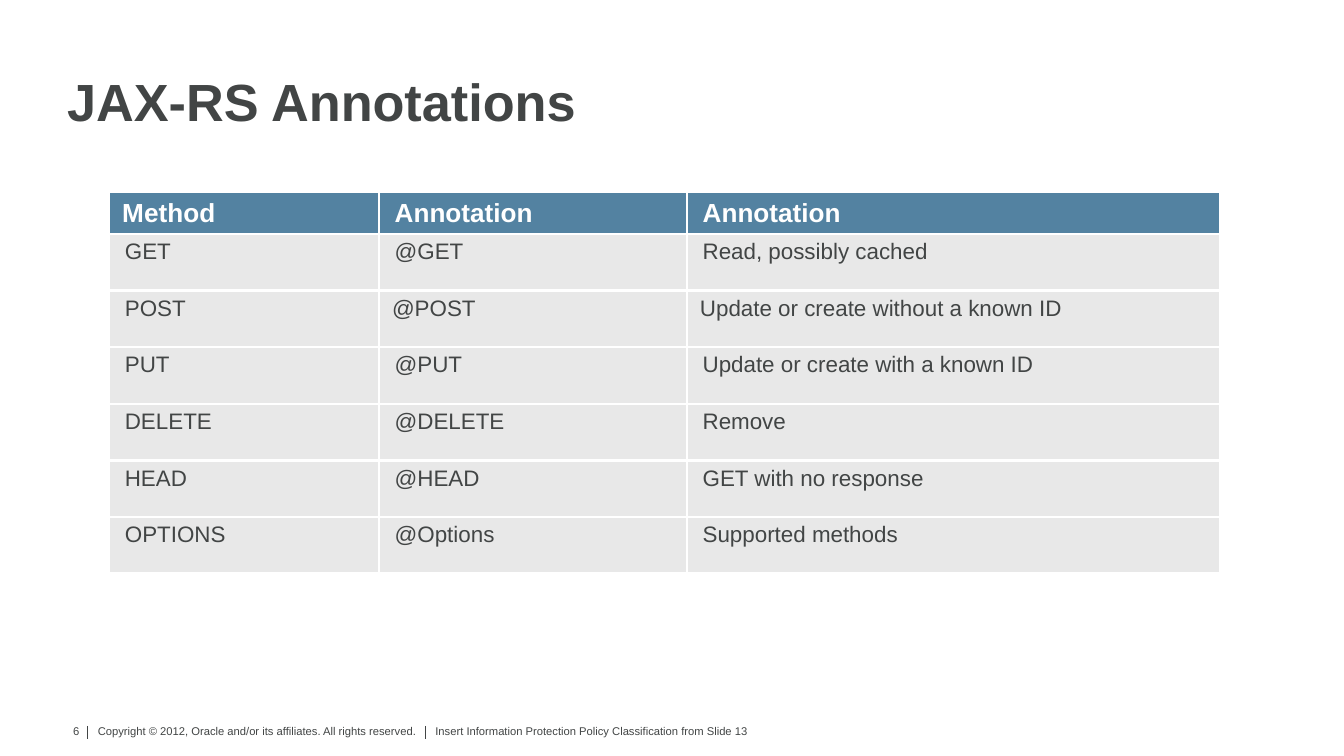
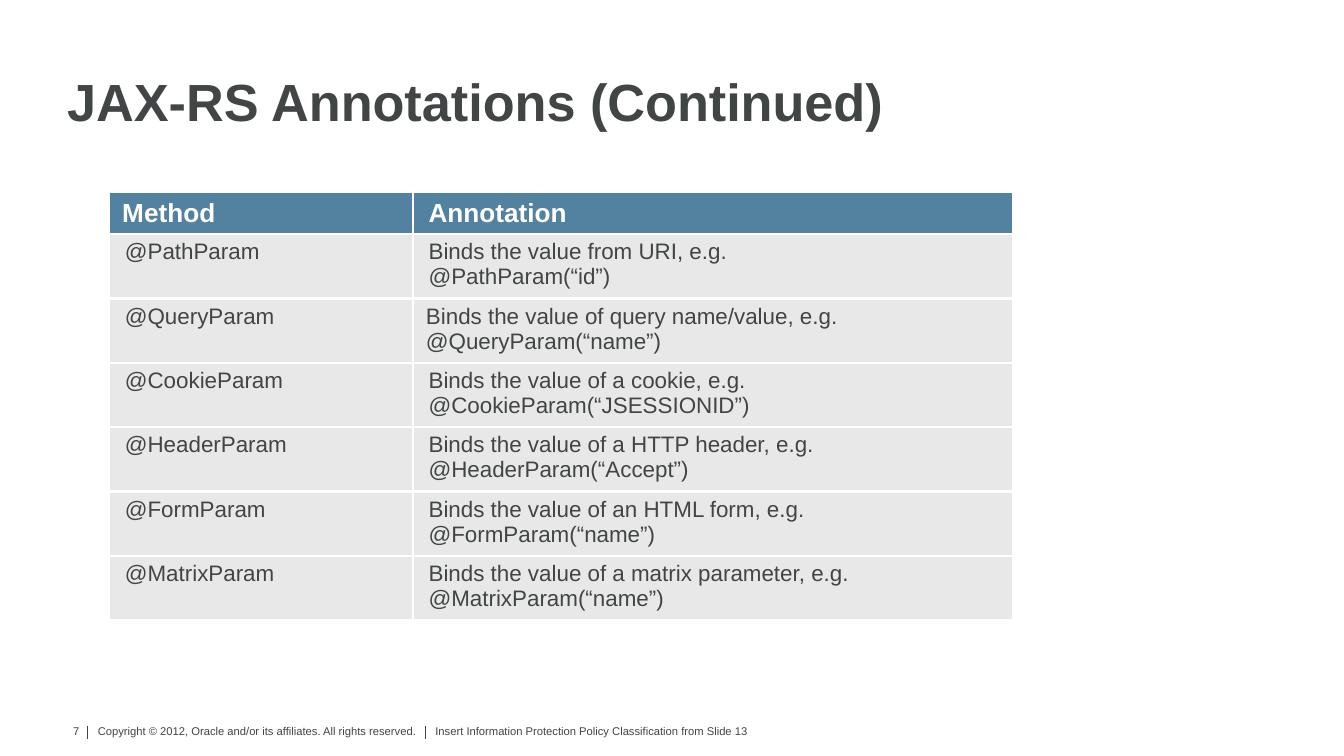
from copy import deepcopy
from lxml.etree import SubElement
from pptx import Presentation
from pptx.dml.color import RGBColor
from pptx.enum.shapes import MSO_CONNECTOR as Connector
from pptx.enum.text import MSO_ANCHOR as Anchor, MSO_AUTO_SIZE as AutoSize, PP_ALIGN as Align
from pptx.oxml.ns import qn
from pptx.util import Cm, Pt

FONT = "Arial"
INK, WHITE, HEADER_FILL, BODY_FILL = "424545", "FFFFFF", "5382A1", "E8E8E8"
FIRST_NUMBER = 6
TITLE_ONLY = 5
TITLE_BOX = (1.27, 1.35, 22.86, 1.17)
TABLE_LEFT, TABLE_TOP = 2.06, 3.63
HEADER_HEIGHT, ROW_HEIGHT = 0.79, 1.07
CELL_INDENT = 0.05
FLUSH_CELLS = {(0, 0), (2, 1), (2, 2)}
FOOTER_TOP, FOOTER_HEIGHT = 13.64, 0.61
NUMBER_BOX = (0.99, 13.56, 0.76, 0.51)
DIVIDERS = (1.65, 8.04)
DIVIDER_TOP, DIVIDER_BOTTOM = 13.72, 13.97

FOOTERS = [
    ("Copyright © 2012, Oracle and/or its affiliates. All rights reserved.", 1.75, 6.96),
    ("Insert Information Protection Policy Classification from Slide 13", 8.13, 6.27),
]

SLIDES = [
    {
        "title": "JAX-RS Annotations",
        "widths": (5.1, 5.82, 10.08),
        "height": 7.21,
        "rows": [
            ("Method", "Annotation", "Annotation"),
            ("GET", "@GET", "Read, possibly cached"),
            ("POST", "@POST", "Update or create without a known ID"),
            ("PUT", "@PUT", "Update or create with a known ID"),
            ("DELETE", "@DELETE", "Remove"),
            ("HEAD", "@HEAD", "GET with no response"),
            ("OPTIONS", "@Options", "Supported methods"),
        ],
    },
    {
        "title": "JAX-RS Annotations (Continued)",
        "widths": (5.74, 11.35),
        "height": 8.05,
        "rows": [
            ("Method", "Annotation"),
            ("@PathParam", "Binds the value from URI, e.g.\n@PathParam(“id”)"),
            ("@QueryParam", "Binds the value of query name/value, e.g.\n@QueryParam(“name”)"),
            ("@CookieParam", "Binds the value of a cookie, e.g.\n@CookieParam(“JSESSIONID”)"),
            ("@HeaderParam", "Binds the value of a HTTP header, e.g.\n@HeaderParam(“Accept”)"),
            ("@FormParam", "Binds the value of an HTML form, e.g.\n@FormParam(“name”)"),
            ("@MatrixParam", "Binds the value of a matrix parameter, e.g.\n@MatrixParam(“name”)"),
        ],
    },
]


def color(value):
    return RGBColor.from_string(value)


def set_all(target, values):
    for name, value in values.items():
        setattr(target, name, value)


def margins(horizontal, vertical):
    return {
        "margin_left": Cm(horizontal), "margin_right": Cm(horizontal),
        "margin_top": Cm(vertical), "margin_bottom": Cm(vertical),
    }


def write(paragraph, text, size, ink=INK, bold=False):
    paragraph.text = text
    for run in paragraph.runs:
        set_all(run.font, {"name": FONT, "size": Pt(size), "bold": bold})
        run.font.color.rgb = color(ink)
    for line_break in paragraph._p.findall(qn("a:br")):
        line_break.insert(0, deepcopy(paragraph.runs[0].font._element))


def add_title(slide, text):
    title = slide.shapes.title
    set_all(title, dict(zip(("left", "top", "width", "height"), map(Cm, TITLE_BOX))))
    frame = title.text_frame
    set_all(frame, {**margins(0, 0), "vertical_anchor": Anchor.BOTTOM,
                    "word_wrap": True, "auto_size": AutoSize.NONE})
    paragraph = frame.paragraphs[0]
    write(paragraph, text, 28, bold=True)
    set_all(paragraph, {"alignment": Align.LEFT, "line_spacing": 0.9})


def add_footer(slide, number):
    for text, left, width in FOOTERS:
        box = slide.shapes.add_textbox(Cm(left), Cm(FOOTER_TOP), Cm(width), Cm(FOOTER_HEIGHT))
        set_all(box.text_frame, {**margins(0.1, 0.05), "word_wrap": True})
        write(box.text_frame.paragraphs[0], text, 6)
    for left in DIVIDERS:
        divider = slide.shapes.add_connector(
            Connector.STRAIGHT, Cm(left), Cm(DIVIDER_TOP), Cm(left), Cm(DIVIDER_BOTTOM))
        divider.line.width = Pt(0.5)
        divider.line.color.rgb = color(INK)
        SubElement(divider._element.spPr, qn("a:effectLst"))
    box = slide.shapes.add_textbox(*map(Cm, NUMBER_BOX))
    set_all(box.text_frame, {"word_wrap": False, "auto_size": AutoSize.SHAPE_TO_FIT_TEXT})
    paragraph = box.text_frame.paragraphs[0]
    write(paragraph, str(number), 6)
    paragraph.alignment = Align.RIGHT


def add_borders(cell):
    properties = cell._tc.get_or_add_tcPr()
    for side in "LRTB":
        line = SubElement(properties, qn(f"a:ln{side}"), w=str(Pt(1.5)))
        fill = SubElement(line, qn("a:solidFill"))
        SubElement(fill, qn("a:srgbClr"), val=WHITE)


def format_cell(cell, text, is_header, is_flush):
    set_all(cell, {**margins(0.25, 0.1),
                   "vertical_anchor": Anchor.MIDDLE if is_header else Anchor.TOP})
    add_borders(cell)
    cell.fill.solid()
    cell.fill.fore_color.rgb = color(HEADER_FILL if is_header else BODY_FILL)
    paragraph = cell.text_frame.paragraphs[0]
    if not is_flush:
        paragraph._p.get_or_add_pPr().set("marL", str(Cm(CELL_INDENT)))
    write(paragraph, text, 14 if is_header else 12, WHITE if is_header else INK, is_header)


def add_annotation_table(slide, rows, widths, height):
    frame = slide.shapes.add_table(
        len(rows), len(widths), Cm(TABLE_LEFT), Cm(TABLE_TOP), Cm(sum(widths)), Cm(height))
    table = frame.table
    table.horz_banding = False
    for column, width in zip(table.columns, widths):
        column.width = Cm(width)
    for row_index, texts in enumerate(rows):
        is_header = row_index == 0
        table.rows[row_index].height = Cm(HEADER_HEIGHT if is_header else ROW_HEIGHT)
        for column_index, text in enumerate(texts):
            position = (row_index, column_index)
            format_cell(table.cell(*position), text, is_header, position in FLUSH_CELLS)
    frame.height = Cm(height)


def main():
    presentation = Presentation()
    set_all(presentation, {"slide_width": Cm(25.4), "slide_height": Cm(14.29)})
    for number, content in enumerate(SLIDES, FIRST_NUMBER):
        slide = presentation.slides.add_slide(presentation.slide_layouts[TITLE_ONLY])
        add_footer(slide, number)
        add_title(slide, content["title"])
        add_annotation_table(slide, content["rows"], content["widths"], content["height"])
    presentation.save("out.pptx")


if __name__ == "__main__":
    main()
